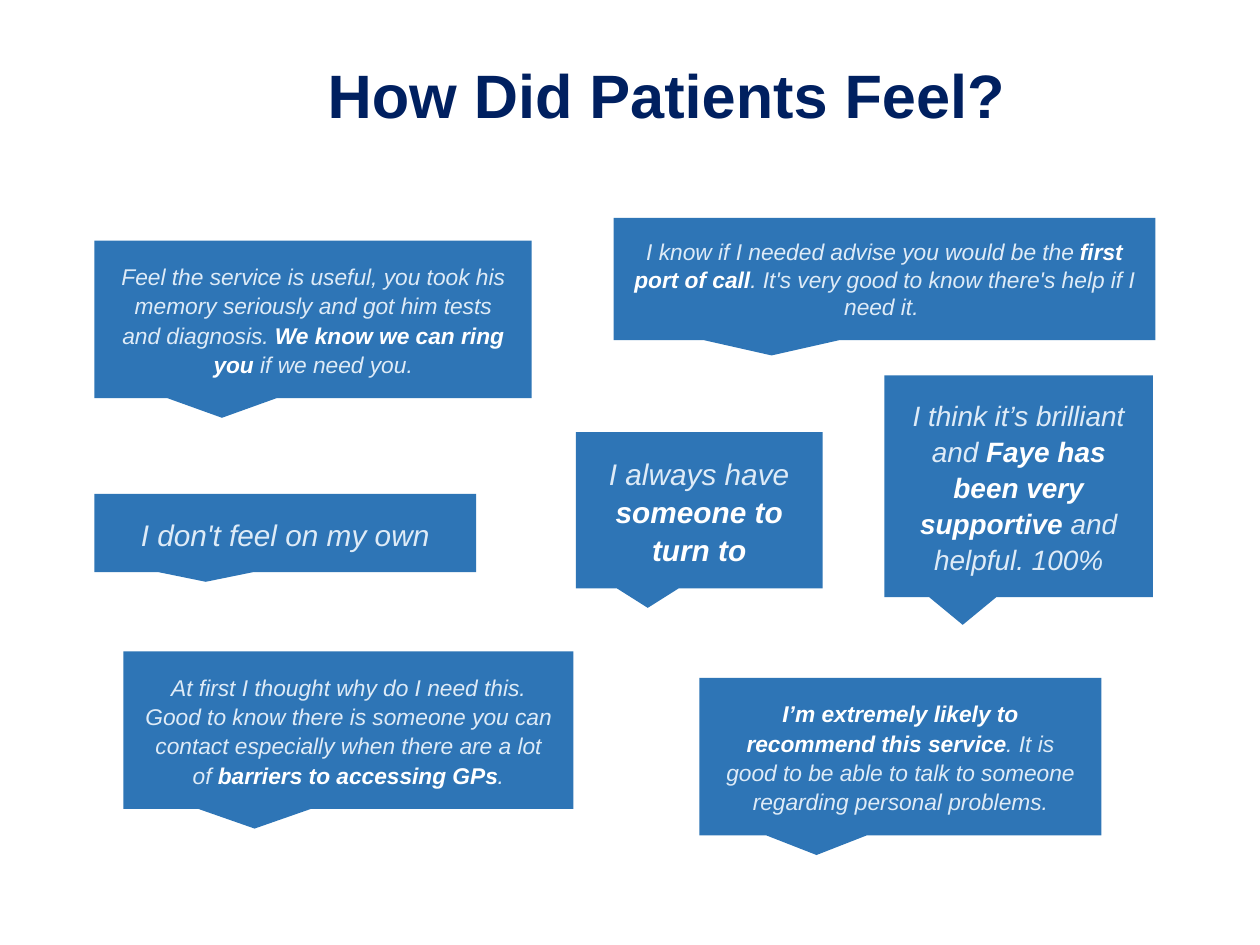
"""Build the slide of patient quotes in callout boxes."""
from pptx import Presentation
from pptx.dml.color import RGBColor
from pptx.enum.shapes import MSO_SHAPE
from pptx.enum.text import MSO_ANCHOR, MSO_AUTO_SIZE, PP_ALIGN
from pptx.util import Inches, Pt

CALLOUT = MSO_SHAPE.RECTANGULAR_CALLOUT
MIDDLE = MSO_ANCHOR.MIDDLE
GROW = MSO_AUTO_SIZE.SHAPE_TO_FIT_TEXT
LEFT, CENTER = PP_ALIGN.LEFT, PP_ALIGN.CENTER

FONT = "Arial"
NAVY, BLUE, PALE, WHITE = "002060", "2E75B6", "DEEBF7", "FFFFFF"
INSET = 0.16
TITLE = "How Did Patients Feel?"
TITLE_BOX = (2.5, 0.39, 7.17, 0.71)

# Each quote: box, text size, line spacing, runs of (text, emphasised).
QUOTES = [
    ((0.75, 1.91, 3.47, 1.25), 13, 1.07, [
        ("Feel the service is useful, you took his memory seriously and got him tests and diagnosis. ", False),
        ("We know we can ring you ", True),
        ("if we need you.", False)]),
    ((4.87, 1.73, 4.3, 0.97), 13, 1.0, [
        ("I know if I needed advise you would be the ", False),
        ("first port of call", True),
        (". It's very good to know there's help if I need it. ", False)]),
    ((7.02, 2.98, 2.13, 1.76), 16, 1.07, [
        ("I think it’s brilliant and ", False),
        ("Faye has been very supportive ", True),
        ("and helpful. 100%", False)]),
    ((0.98, 5.17, 3.57, 1.25), 13, 1.07, [
        ("At first I thought why do I need this. Good to know there is someone you can contact "
         "especially when there are a lot of ", False),
        ("barriers to accessing GPs", True),
        (".", False)]),
    ((4.57, 3.43, 1.96, 1.24), 17, 1.07, [
        ("I always have ", False),
        ("someone to turn to", True)]),
    ((0.75, 3.92, 3.03, 0.62), 17, 1.07, [
        ("I don't feel on my own", False)]),
    ((5.55, 5.38, 3.19, 1.25), 13, 1.07, [
        ("I’m extremely likely to recommend this service", True),
        (". It is good to be able to talk to someone regarding personal problems.", False)]),
]


def color(hex_value):
    return RGBColor.from_string(hex_value)


def format_font(font, size, hex_value, bold, italic=False):
    font.name = FONT
    font.size = Pt(size)
    font.color.rgb = color(hex_value)
    font.bold = bold
    font.italic = italic


def set_title(slide):
    title = slide.shapes.title
    title.left, title.top, title.width, title.height = map(Inches, TITLE_BOX)
    text_frame = title.text_frame
    text_frame.text = TITLE
    text_frame.vertical_anchor = MIDDLE
    text_frame.auto_size = MSO_AUTO_SIZE.NONE
    paragraph = text_frame.paragraphs[0]
    paragraph.alignment = LEFT
    format_font(paragraph.runs[0].font, 35, NAVY, True)


def add_quote(slide, box, size, spacing, runs):
    shape = slide.shapes.add_shape(CALLOUT, *map(Inches, box))
    shape.shadow.inherit = False
    shape.fill.solid()
    shape.fill.fore_color.rgb = color(BLUE)
    shape.line.fill.background()
    text_frame = shape.text_frame
    text_frame.word_wrap = True
    text_frame.auto_size = GROW
    text_frame.vertical_anchor = MIDDLE
    for side in ("left", "top", "right", "bottom"):
        setattr(text_frame, f"margin_{side}", Inches(INSET))
    paragraph = text_frame.paragraphs[0]
    paragraph.alignment = CENTER
    paragraph.line_spacing = spacing
    for text, emphasised in runs:
        run = paragraph.add_run()
        run.text = text
        format_font(run.font, size, WHITE if emphasised else PALE, emphasised, True)


def main():
    presentation = Presentation()
    presentation.slide_width, presentation.slide_height = Inches(10), Inches(7.5)
    slide = presentation.slides.add_slide(presentation.slide_layouts[5])
    set_title(slide)
    for quote in QUOTES:
        add_quote(slide, *quote)
    presentation.save("out.pptx")


if __name__ == "__main__":
    main()
